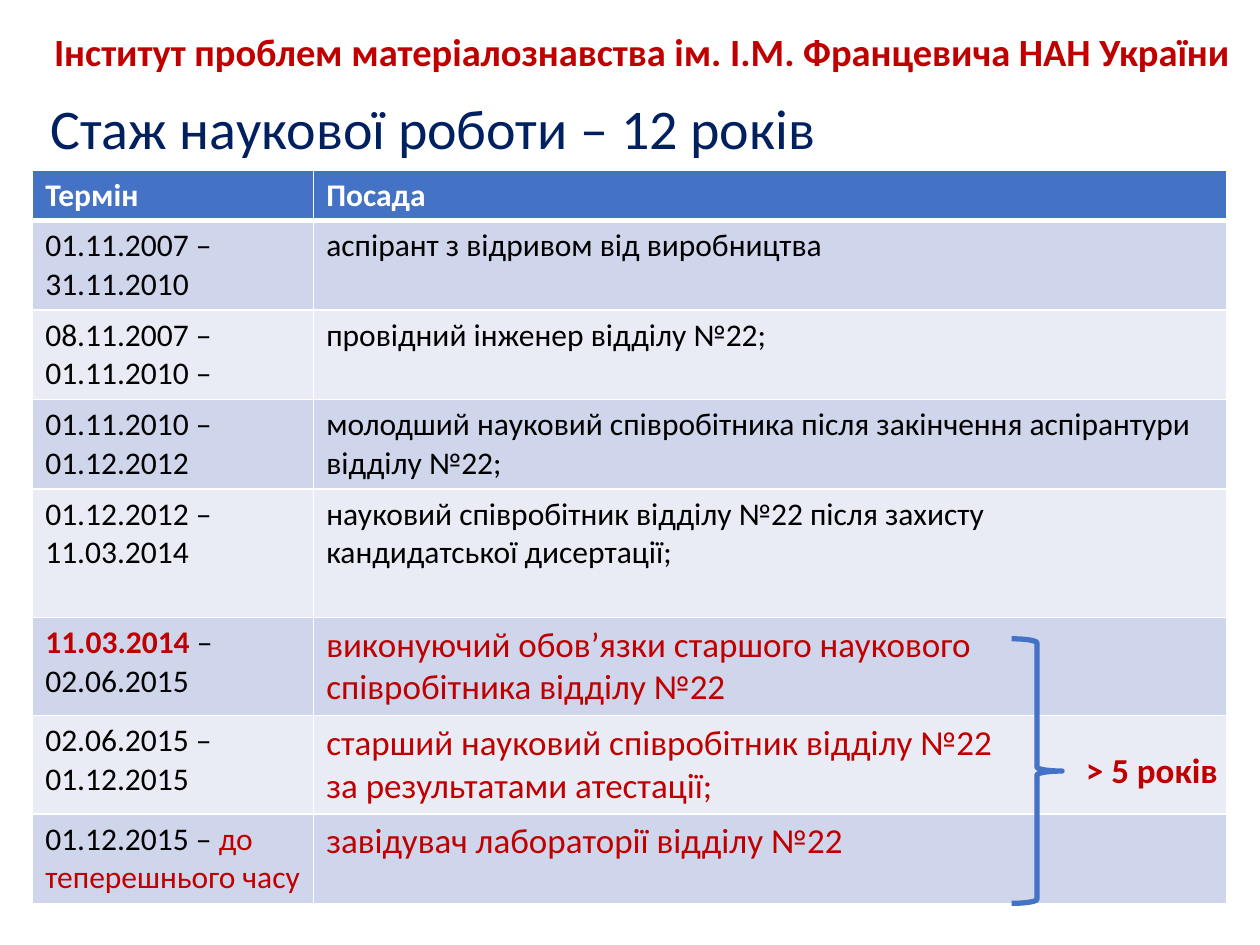
"""Build a slide with a table of research positions and years of service."""
import pptx
import pptx.dml.color
import pptx.enum.shapes
import pptx.enum.text
import pptx.oxml
import pptx.oxml.ns
import pptx.util

Inches = pptx.util.Inches
THEME = {
    "font": "Calibri",
    "red": "C00000", "navy": "002060", "blue": "4472C4", "black": "000000",
    "white": "FFFFFF", "bands": ("CFD5EA", "E9EBF5"),
    "title": 32, "institute": 22, "large": 20, "body": 18,
}


def style(font, size, color, bold=False):
    font.name = THEME["font"]
    font.size = pptx.util.Pt(size)
    font.bold = bold
    font.color.rgb = pptx.dml.color.RGBColor.from_string(THEME[color])


def add_label(page, bounds, text, size, color, bold):
    box = page.shapes.add_textbox(*[Inches(length) for length in bounds])
    box.text_frame.word_wrap = True
    para = box.text_frame.paragraphs[0]
    para.text = text
    style(para.font, THEME[size], color, bold)
    return box.text_frame


deck = pptx.Presentation()
deck.slide_width, deck.slide_height = Inches(10), Inches(7.5)
page = deck.slides.add_slide(deck.slide_layouts[6])

title = add_label(page, (0.3, 0.74, 9.02, 0.61), "Стаж наукової роботи – 12 років", "title", "navy", False)
title.vertical_anchor = pptx.enum.text.MSO_ANCHOR.MIDDLE
title.paragraphs[0].line_spacing = 0.9

rows = [
    (0.4, [("Термін", "white", True)], ["Посада"], "body", "white"),
    (0.71, [("01.11.2007 – 31.11.2010", "black", False)],
     ["аспірант з відривом від виробництва"], "body", "black"),
    (0.71, [("08.11.2007 – 01.11.2010 –", "black", False)],
     ["провідний інженер відділу №22;"], "body", "black"),
    (0.71, [("01.11.2010 – 01.12.2012", "black", False)],
     ["молодший науковий співробітника після закінчення аспірантури відділу №22;"], "body", "black"),
    (1.02, [("01.12.2012 – 11.03.2014", "black", False)],
     ["науковий співробітник відділу №22 після захисту", "кандидатської дисертації;"], "body", "black"),
    (0.78, [("11.03.2014", "red", True), (" – 02.06.2015", "black", False)],
     ["виконуючий обов’язки старшого наукового", "співробітника відділу №22"], "large", "red"),
    (0.78, [("02.06.2015 – 01.12.2015", "black", False)],
     ["старший науковий співробітник відділу №22", "за результатами атестації;"], "large", "red"),
    (0.71, [("01.12.2015 – ", "black", False), ("до теперешнього часу", "red", False)],
     ["завідувач лабораторії відділу №22"], "large", "red"),
]

table = page.shapes.add_table(
    len(rows), 2, Inches(0.26), Inches(1.35), Inches(9.48), Inches(sum(row[0] for row in rows))
).table
table.columns[0].width, table.columns[1].width = Inches(2.23), Inches(7.25)

for index, (height, term, position, size, color) in enumerate(rows):
    table.rows[index].height = Inches(height)
    term_cell, position_cell = table.cell(index, 0), table.cell(index, 1)
    para = term_cell.text_frame.paragraphs[0]
    for text, span_color, bold in term:
        span = para.add_run()
        span.text = text
        style(span.font, THEME["body"], span_color, bold)
    position_cell.text = "\n".join(position)
    for para in position_cell.text_frame.paragraphs:
        style(para.font, THEME[size], color, index == 0)
    fill = THEME["bands"][(index - 1) % 2] if index else THEME["blue"]
    for cell in (term_cell, position_cell):
        properties = cell._tc.get_or_add_tcPr()
        for side in "LRTB":
            thick = (side, index) in (("B", 0), ("T", 1))
            width = pptx.util.Pt(3 if thick else 1)
            properties.append(pptx.oxml.parse_xml(
                f'<a:ln{side} {pptx.oxml.ns.nsdecls("a")} w="{width}"><a:solidFill>'
                f'<a:srgbClr val="{THEME["white"]}"/></a:solidFill></a:ln{side}>'
            ))
        cell.fill.solid()
        cell.fill.fore_color.rgb = pptx.dml.color.RGBColor.from_string(fill)

institute = add_label(
    page, (0.3, 0.17, 9.59, 0.47),
    "Інститут проблем матеріалознавства ім. І.М. Францевича НАН України", "institute", "red", True,
)
institute.paragraphs[0].alignment = pptx.enum.text.PP_ALIGN.CENTER

brace = page.shapes.add_shape(
    pptx.enum.shapes.MSO_SHAPE.RIGHT_BRACE, Inches(8.03), Inches(5.07), Inches(0.4), Inches(2.1)
)
brace.adjustments[0], brace.adjustments[1] = 0.08, 0.5
brace.shadow.inherit = False
brace.fill.background()
brace.line.color.rgb = pptx.dml.color.RGBColor.from_string(THEME["blue"])
brace.line.width = pptx.util.Pt(3)

add_label(page, (8.52, 5.89, 1.58, 0.44), "> 5 років", "large", "red", True)

deck.save("out.pptx")
